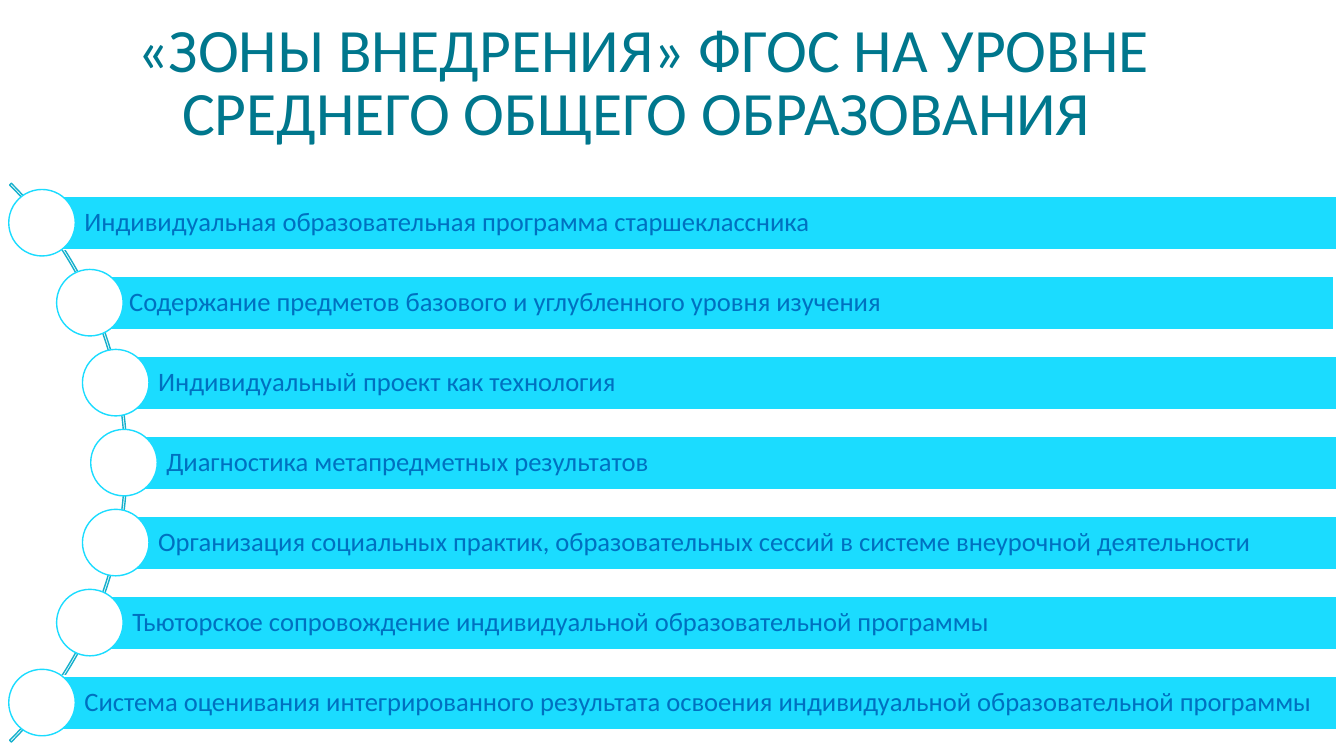
from dataclasses import dataclass
from math import sqrt

from pptx import Presentation
from pptx.dml.color import RGBColor
from pptx.enum.shapes import MSO_SHAPE as SHAPE
from pptx.enum.text import MSO_ANCHOR as ANCHOR, PP_ALIGN as ALIGN
from pptx.util import Inches, Pt


@dataclass(frozen=True)
class Theme:
    font: str = "Calibri"
    title: str = "00778D"
    text: str = "0070C0"
    bar: str = "1BDCFF"
    arc: str = "16B0CC"
    white: str = "FFFFFF"
    title_size: int = 44
    text_size: int = 19
    line: int = 1


THEME = Theme()

TITLE = "«ЗОНЫ ВНЕДРЕНИЯ» ФГОС НА УРОВНЕ СРЕДНЕГО ОБЩЕГО ОБРАЗОВАНИЯ "

# Each zone: wording and sideways shift of its bar
ZONES = [
    ("Индивидуальная образовательная программа старшеклассника", 0),
    ("Содержание предметов базового и углубленного уровня изучения", -0.03),
    ("Индивидуальный проект как технология", 0),
    ("Диагностика метапредметных результатов", 0),
    ("Организация социальных практик, образовательных сессий в системе внеурочной деятельности", 0),
    ("Тьюторское сопровождение индивидуальной образовательной программы", 0),
    ("Система оценивания интегрированного результата освоения индивидуальной образовательной программы", 0),
]


def add_shape(slide, kind, box, line, fill=None):
    sp = slide.shapes.add_shape(kind, *map(Inches, box))
    sp.shadow.inherit = False
    if fill:
        sp.fill.solid()
        sp.fill.fore_color.rgb = RGBColor.from_string(fill)
    else:
        sp.fill.background()
    sp.line.color.rgb = RGBColor.from_string(line)
    sp.line.width = Pt(THEME.line)
    return sp


def write(sp, text, size, color, align=ALIGN.LEFT, anchor=ANCHOR.MIDDLE,
          spacing=0.9, insets=(0.1, 0.05, 0.1, 0.05)):
    tf = sp.text_frame
    tf.word_wrap = True
    tf.vertical_anchor = anchor
    tf.margin_left, tf.margin_top, tf.margin_right, tf.margin_bottom = map(Inches, insets)
    p = tf.paragraphs[0]
    p.alignment = align
    p.line_spacing = spacing
    r = p.add_run()
    r.text = text
    r.font.name = THEME.font
    r.font.size = Pt(size)
    r.font.color.rgb = RGBColor.from_string(color)


def add_title(slide, box):
    sp = slide.shapes.add_textbox(*map(Inches, box))
    write(sp, TITLE, THEME.title_size, THEME.title, align=ALIGN.CENTER,
          anchor=ANCHOR.BOTTOM, spacing=0.85)


def add_zones(slide, box, bar_height=0.53, circle=0.66):
    """Bars fanned along an arc; the box spans the first to the last circle."""
    left, top, width, height = box
    step = (height - circle) / (len(ZONES) - 1)
    middle = top + height / 2

    # Arc behind the circles
    arc_size, arc_center, track = 7.84, left - 2.74, 3.89
    arc = add_shape(slide, SHAPE.BLOCK_ARC,
                    (arc_center - arc_size / 2, middle - arc_size / 2, arc_size, arc_size),
                    THEME.arc)
    for i, value in enumerate((189, 27, 0.003)):
        arc.adjustments[i] = value

    # Bars start at the centres of their circles
    for i, (text, shift) in enumerate(ZONES):
        y = top + circle / 2 + i * step
        x = arc_center + sqrt(track ** 2 - (y - middle) ** 2)
        bar = add_shape(slide, SHAPE.RECTANGLE,
                        (x + shift, y - bar_height / 2, left + width - x, bar_height),
                        THEME.white, THEME.bar)
        write(bar, text, THEME.text_size, THEME.text, insets=(0.42, 0.05, 0.05, 0.05))
        add_shape(slide, SHAPE.OVAL, (x - circle / 2, y - circle / 2, circle, circle),
                  THEME.bar, THEME.white)


def main():
    prs = Presentation()
    prs.slide_width, prs.slide_height = Inches(13.33), Inches(7.5)
    slide = prs.slides.add_slide(prs.slide_layouts[6])
    add_title(slide, (0.32, 0.1, 12.13, 1.42))
    add_zones(slide, (0.08, 1.88, 13.18, 5.42))
    prs.save("out.pptx")


if __name__ == "__main__":
    main()
